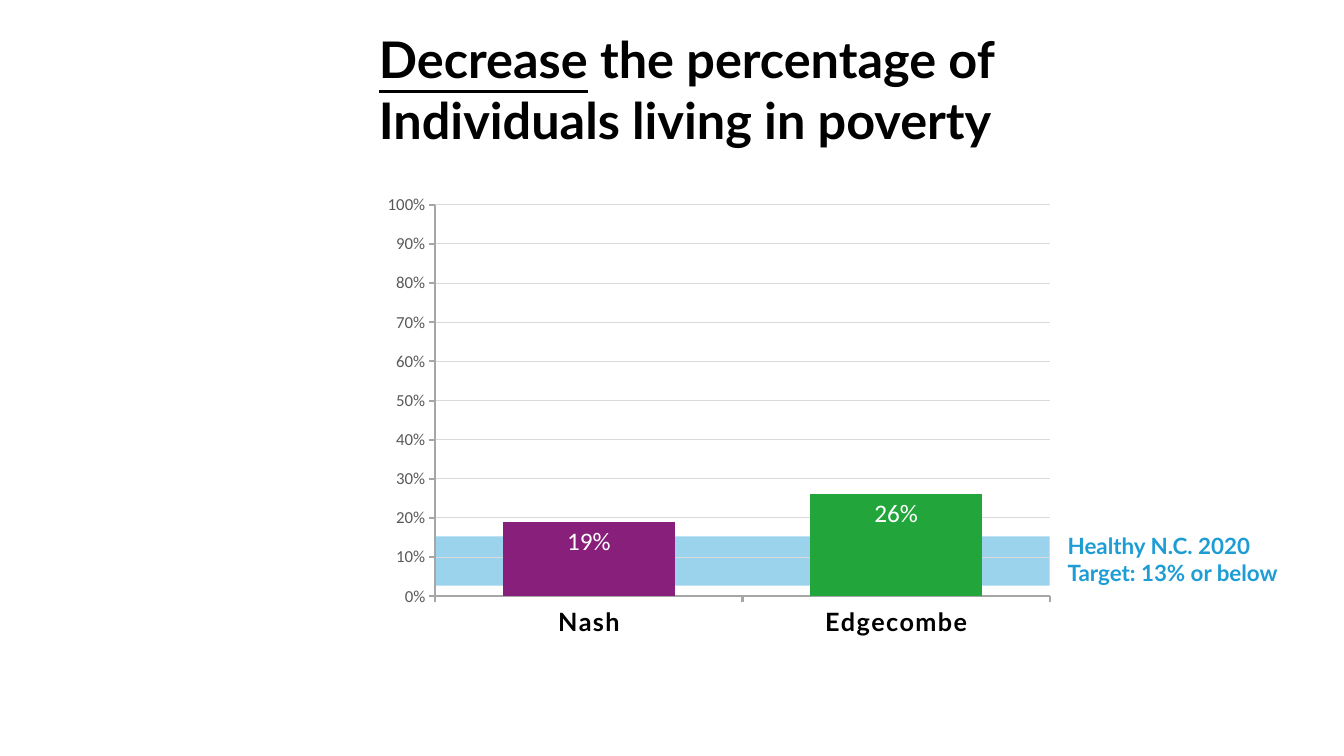
from lxml import etree
from pptx import Presentation
from pptx.chart.data import CategoryChartData
from pptx.dml.color import RGBColor
from pptx.enum.chart import XL_CHART_TYPE, XL_LABEL_POSITION, XL_TICK_MARK
from pptx.enum.shapes import MSO_SHAPE
from pptx.oxml import parse_xml
from pptx.oxml.ns import nsdecls, qn
from pptx.util import Inches, Pt

WIDE, HIGH = 13.33, 7.5
TITLE = [[("Decrease", True), (" the percentage of", False)],
         [("Individuals living in poverty", False)]]
TARGET = "Healthy N.C. 2020 Target: 13% or below"
BARS = [("Nash", 0.19, "881F7B"), ("Edgecombe", 0.26, "22A53B")]
BLUE, BLACK, AXIS, GRID = "1E9DD4", "000000", "A6A6A6", "D9D9D9"
PLOT = {"x": 0.09, "y": 0.04, "w": 0.89, "h": 0.85}
PLACES = {"band": (4.32, 5.32, 6.09, 0.49), "chart": (3.7, 1.85, 6.85, 4.57),
          "title": (3.66, 0.23, 6.83, 1.31), "target": (10.59, 5.28, 2.26, 0.54)}


def color(hue):
    return RGBColor.from_string(hue)


def place(name):
    return [Inches(n) for n in PLACES[name]]


def style(font, size, hue, face="Lato", bold=True):
    font.size, font.name, font.bold = Pt(size), face, bold
    font.color.rgb = color(hue)


def stroke(line, hue, width):
    line.color.rgb, line.width = color(hue), Pt(width)


def add_band(slide):
    band = slide.shapes.add_shape(MSO_SHAPE.RECTANGLE, *place("band"))
    band.shadow.inherit = False
    band.fill.solid()
    band.fill.fore_color.rgb = color(BLUE)
    band.line.fill.background()
    tint = next(band.element.spPr.iter(qn("a:srgbClr")))
    etree.SubElement(tint, qn("a:alpha"), val="44000")


def add_bars(slide):
    data = CategoryChartData(number_format="0%")
    data.categories = [name for name, rate, hue in BARS]
    data.add_series("Series 1", [rate for name, rate, hue in BARS])
    frame = slide.shapes.add_chart(XL_CHART_TYPE.COLUMN_STACKED, *place("chart"), data)
    chart = frame.chart
    chart.has_legend = chart.has_title = False
    style(chart.font, 10, BLACK, "Calibri", False)

    cats, vals = chart.category_axis, chart.value_axis
    for axis in (cats, vals):
        axis.major_tick_mark = XL_TICK_MARK.OUTSIDE
        axis.minor_tick_mark = XL_TICK_MARK.NONE
        stroke(axis.format.line, AXIS, 1.5)
    style(cats.tick_labels.font, 18, BLACK)
    style(vals.tick_labels.font, 12, "595959", "Calibri", False)
    vals.minimum_scale, vals.maximum_scale, vals.major_unit = 0, 1, 0.1
    vals.tick_labels.number_format = "0%"
    vals.tick_labels.number_format_is_linked = False
    stroke(vals.major_gridlines.format.line, GRID, 0.75)

    plot = chart.plots[0]
    plot.gap_width, plot.overlap, plot.vary_by_categories = 79, 100, False
    series = plot.series[0]
    series.format.fill.solid()
    series.format.fill.fore_color.rgb = color(BLUE)
    for i, (name, rate, hue) in enumerate(BARS):
        fill = series.points[i].format.fill
        fill.solid()
        fill.fore_color.rgb = color(hue)
    labels = series.data_labels
    labels.show_value = True
    labels.position = XL_LABEL_POSITION.INSIDE_END
    labels.number_format, labels.number_format_is_linked = "0%", False
    style(labels.font, 18, "FFFFFF", "Calibri", False)
    tune(chart.element)


def tune(root):
    """Fix the plot area, clear the backdrop and space out the category names."""
    area = next(root.iter(qn("c:plotArea")))
    for old in area.findall(qn("c:layout")):
        area.remove(old)
    layout = etree.Element(qn("c:layout"))
    manual = etree.SubElement(layout, qn("c:manualLayout"))
    rules = {"layoutTarget": "inner", "xMode": "edge", "yMode": "edge", **PLOT}
    for tag, val in rules.items():
        etree.SubElement(manual, qn("c:" + tag), val=str(val))
    area.insert(0, layout)
    clear = f"<c:spPr {nsdecls('c', 'a')}><a:noFill/><a:ln><a:noFill/></a:ln></c:spPr>"
    root.find(qn("c:chart")).addnext(parse_xml(clear))
    names = next(root.iter(qn("c:catAx")))
    next(names.iter(qn("a:defRPr"))).set("spc", "100")


def add_title(slide):
    frame = slide.shapes.add_textbox(*place("title")).text_frame
    frame.word_wrap = False
    for i, parts in enumerate(TITLE):
        para = frame.add_paragraph() if i else frame.paragraphs[0]
        for text, under in parts:
            run = para.add_run()
            run.text = text
            style(run.font, 36, BLACK)
            run.font.underline = under


def add_target(slide):
    frame = slide.shapes.add_textbox(*place("target")).text_frame
    frame.word_wrap = True
    frame.margin_left = frame.margin_right = frame.margin_top = frame.margin_bottom = 0
    frame.text = TARGET
    style(frame.paragraphs[0].runs[0].font, 16, BLUE)


def main():
    deck = Presentation()
    deck.slide_width, deck.slide_height = Inches(WIDE), Inches(HIGH)
    slide = deck.slides.add_slide(deck.slide_layouts[6])
    for add in (add_band, add_bars, add_title, add_target):
        add(slide)
    deck.save("out.pptx")


if __name__ == "__main__":
    main()
